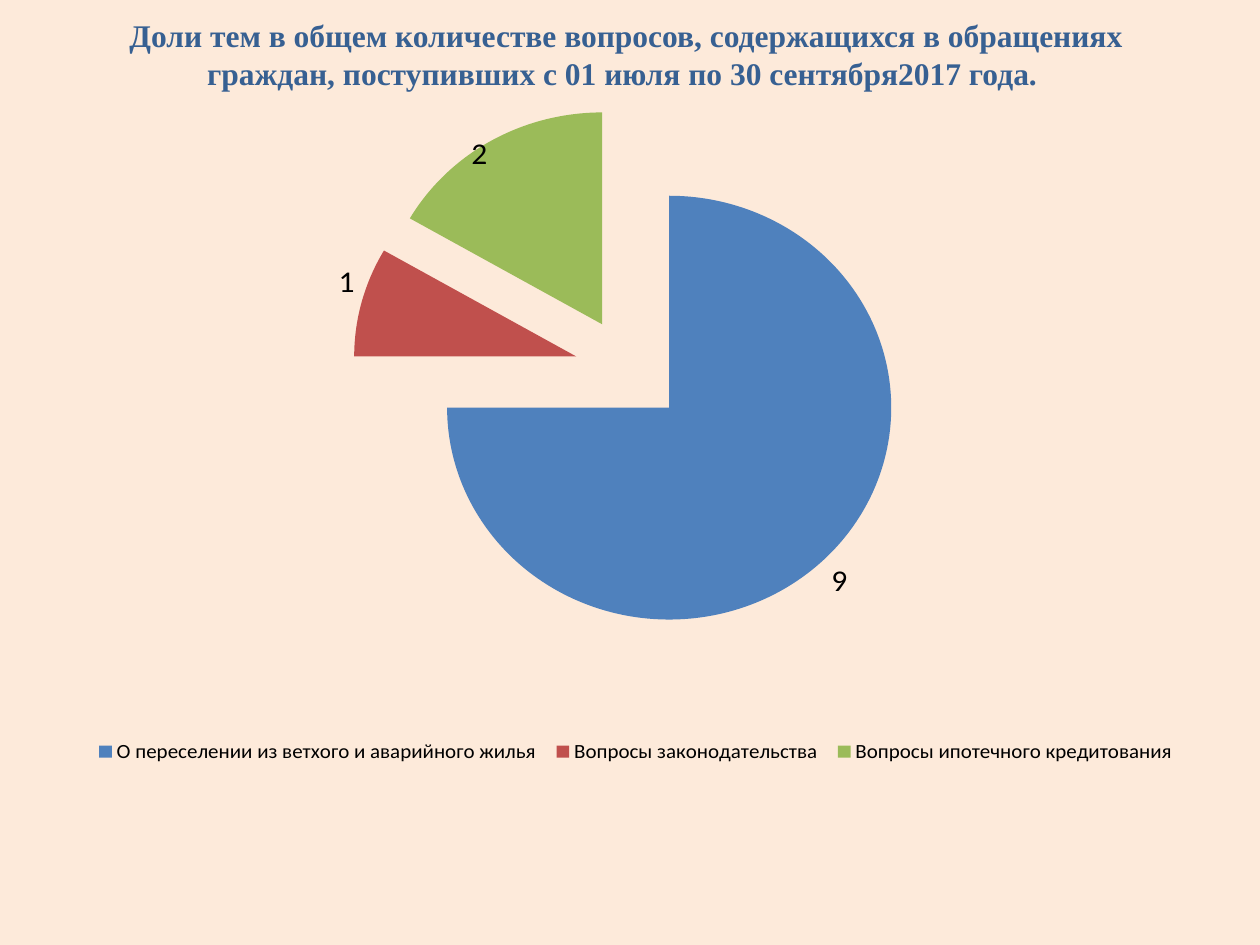
from pptx import Presentation, util as u
from pptx.chart import data as chart_data
from pptx.dml import color
from pptx.enum import chart as ch, text
from pptx.oxml import parse_xml
from pptx.oxml.ns import nsdecls, qn

THEME = {
    "background": "FDEADA",
    "slices": ["4F81BD", "C0504D", "9BBB59"],
    "title": {"name": "Times New Roman", "size": u.Pt(18), "bold": True, "color": "376092"},
    "labels": {"name": "Calibri", "size": u.Pt(18), "color": "000000"},
    "legend": {"name": "Calibri", "size": u.Pt(12), "color": "000000"},
}
TOPICS = {
    "О переселении из ветхого и аварийного жилья": 9,
    "Вопросы законодательства": 1,
    "Вопросы ипотечного кредитования": 2,
}
EXPLOSION = 25


def style_font(font, style):
    for name, value in style.items():
        if name == "color":
            font.color.rgb = color.RGBColor.from_string(value)
        else:
            setattr(font, name, value)


def manual_layout(x, y, w, h, target=""):
    """Layout given as shares of the chart area."""
    sizes = "".join(f'<c:{key} val="{value}"/>' for key, value in zip("xywh", (x, y, w, h)))
    return parse_xml(
        f'<c:layout {nsdecls("c")}><c:manualLayout>{target}'
        f'<c:xMode val="edge"/><c:yMode val="edge"/>{sizes}'
        "</c:manualLayout></c:layout>"
    )


presentation = Presentation()
presentation.slide_width, presentation.slide_height = u.Inches(10), u.Inches(7.5)
width, height = presentation.slide_width, presentation.slide_height
slide = presentation.slides.add_slide(presentation.slide_layouts[6])
slide.background.fill.solid()
slide.background.fill.fore_color.rgb = color.RGBColor.from_string(THEME["background"])

# Title
title = slide.shapes.add_textbox(u.Inches(0.47), 0, int(width * 0.9), u.Inches(0.86))
frame = title.text_frame
frame.word_wrap = True
frame.vertical_anchor = text.MSO_ANCHOR.MIDDLE
paragraph = frame.paragraphs[0]
paragraph.alignment = text.PP_ALIGN.CENTER
run = paragraph.add_run()
run.text = (
    "Доли тем в общем количестве вопросов, содержащихся в обращениях граждан, "
    "поступивших с 01 июля по 30 сентября2017 года. "
)
style_font(run.font, THEME["title"])

# Pie chart of topics
topics = chart_data.CategoryChartData()
topics.categories = list(TOPICS)
topics.add_series("Series 1", list(TOPICS.values()))
chart = slide.shapes.add_chart(
    ch.XL_CHART_TYPE.PIE, int(width * 0.05), u.Inches(0.78), int(width * 0.9), u.Inches(6.41), topics
).chart
chart.has_title = False
style_font(chart.font, THEME["labels"])
plot = chart.plots[0]
plot.vary_by_categories = True

# Plot area position
plot_area = chart._chartSpace.chart.plotArea
for old_layout in plot_area.findall(qn("c:layout")):
    plot_area.remove(old_layout)
plot_area.insert(0, manual_layout(0, 0.03, 1, 0.55, '<c:layoutTarget val="inner"/>'))

# Separated slices
for index, slice_color in enumerate(THEME["slices"]):
    slice_format = plot.series[0].points[index].format
    slice_format.fill.solid()
    slice_format.fill.fore_color.rgb = color.RGBColor.from_string(slice_color)
for shape_properties in plot_area.iterfind(f".//{qn('c:dPt')}/{qn('c:spPr')}"):
    shape_properties.addprevious(parse_xml(f'<c:explosion {nsdecls("c")} val="{EXPLOSION}"/>'))

# Value labels
labels = plot.series[0].data_labels
labels.show_value = True
labels.position = ch.XL_LABEL_POSITION.OUTSIDE_END
style_font(labels.font, THEME["labels"])

# Legend
chart.has_legend = True
legend = chart.legend
legend.position = ch.XL_LEGEND_POSITION.BOTTOM
legend.include_in_layout = False
style_font(legend.font, THEME["legend"])
legend_element = legend._element
for old_layout in legend_element.findall(qn("c:layout")):
    legend_element.remove(old_layout)
legend_element.find(qn("c:legendPos")).addnext(manual_layout(0.02, 0.77, 0.97, 0.06))

presentation.save("out.pptx")
